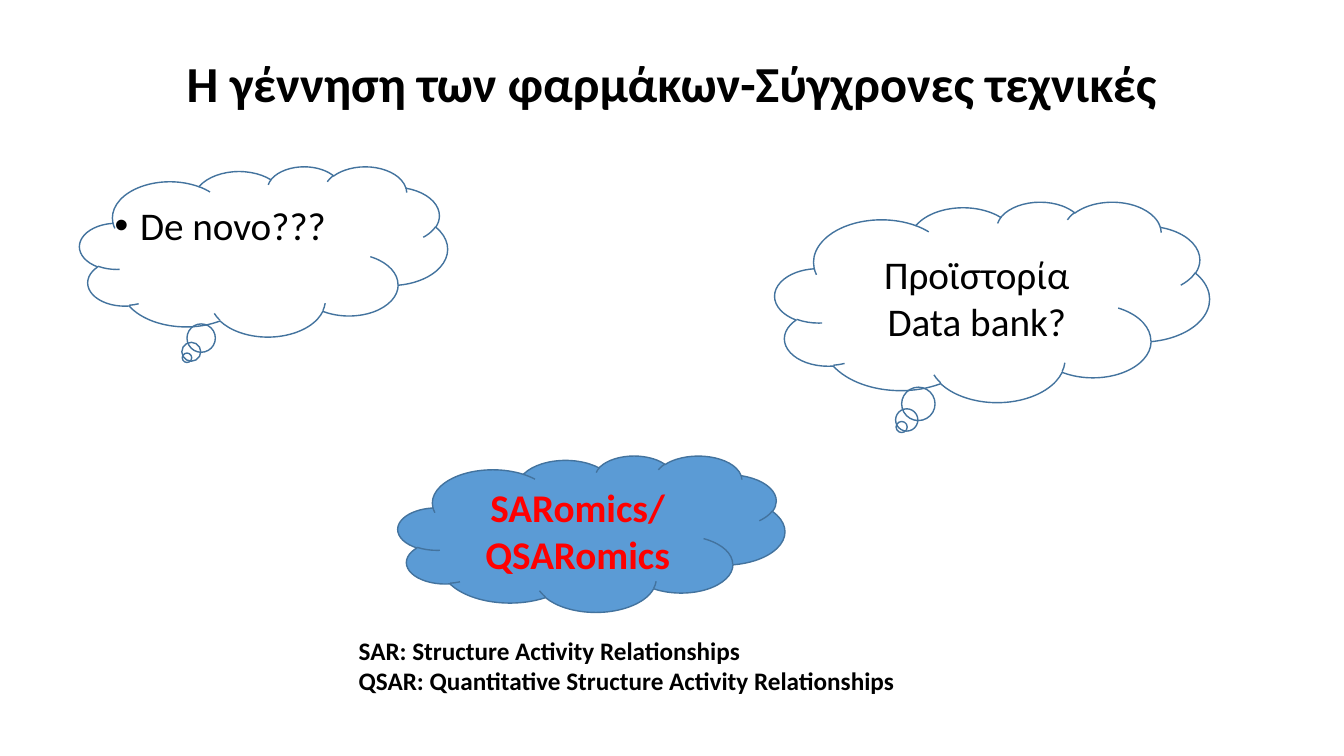
from lxml import etree
from pptx import Presentation
from pptx.dml.color import RGBColor
from pptx.enum.shapes import MSO_SHAPE
from pptx.enum.text import MSO_ANCHOR, PP_ALIGN
from pptx.oxml.ns import qn
from pptx.util import Cm, Pt

CLOUD = MSO_SHAPE.CLOUD
THOUGHT = MSO_SHAPE.CLOUD_CALLOUT
TOP, MIDDLE = MSO_ANCHOR.TOP, MSO_ANCHOR.MIDDLE
LEFT, CENTER = PP_ALIGN.LEFT, PP_ALIGN.CENTER

BLACK = "000000"
RED = "FF0000"
BLUE = "5B9BD5"
OUTLINE = "43739E"


def color(value):
    return RGBColor.from_string(value)


def write(frame, text, size=28, ink=BLACK, bold=False, align=LEFT,
          anchor=TOP, spacing=None, before=None, bullet=None):
    frame.word_wrap = True
    frame.vertical_anchor = anchor
    for index, line in enumerate(text.split("\n")):
        paragraph = frame.add_paragraph() if index else frame.paragraphs[0]
        paragraph.alignment = align
        if spacing:
            paragraph.line_spacing = spacing
        if before:
            paragraph.space_before = Pt(before)
        if bullet:
            properties = paragraph._p.get_or_add_pPr()
            properties.set("marL", str(Cm(0.64)))
            properties.set("indent", str(-Cm(0.64)))
            etree.SubElement(properties, qn("a:buFont")).set("typeface", "Arial")
            etree.SubElement(properties, qn("a:buChar")).set("char", bullet)
        run = paragraph.add_run()
        run.text = line
        run.font.name = "Calibri"
        run.font.size = Pt(size)
        run.font.bold = bold
        run.font.color.rgb = color(ink)


class DrugSlide:
    def __init__(self, presentation):
        layout = presentation.slide_layouts[6]
        self.shapes = presentation.slides.add_slide(layout).shapes

    def text(self, box, text, **style):
        frame = self.shapes.add_textbox(*map(Cm, box)).text_frame
        write(frame, text, **style)
        return frame

    def cloud(self, kind, box, text="", fill=None, **style):
        cloud = self.shapes.add_shape(kind, *map(Cm, box))
        cloud.shadow.inherit = False
        cloud.line.color.rgb = color(OUTLINE)
        cloud.line.width = Pt(1)
        if fill:
            cloud.fill.solid()
            cloud.fill.fore_color.rgb = color(fill)
        else:
            cloud.fill.background()
        if text:
            write(cloud.text_frame, text, align=CENTER, anchor=MIDDLE, **style)


def main():
    presentation = Presentation()
    presentation.slide_width = Cm(33.87)
    presentation.slide_height = Cm(19.05)
    slide = DrugSlide(presentation)

    title = slide.text((2.33, 1.01, 29.21, 3.68),
                       "Η γέννηση των φαρμάκων-Σύγχρονες τεχνικές",
                       size=36, bold=True, align=CENTER, anchor=MIDDLE, spacing=0.9)
    title.margin_bottom = Cm(1.5)
    slide.text((2.64, 5.08, 29.21, 12.09), "De novo???",
               spacing=0.9, before=10, bullet="•")
    slide.cloud(THOUGHT, (19.53, 5.08, 10.95, 5.05), "Προϊστορία\nData bank?")
    slide.cloud(THOUGHT, (2.01, 4.19, 9.27, 4.29))
    slide.cloud(CLOUD, (10.03, 11.48, 9.75, 3.94), "SARomics/QSARomics",
                fill=BLUE, ink=RED, bold=True)
    slide.text((8.79, 15.88, 14.4, 1.8),
               "SAR: Structure Activity Relationships\n"
               "QSAR: Quantitative Structure Activity Relationships",
               size=18, bold=True)

    presentation.save("out.pptx")


if __name__ == "__main__":
    main()
